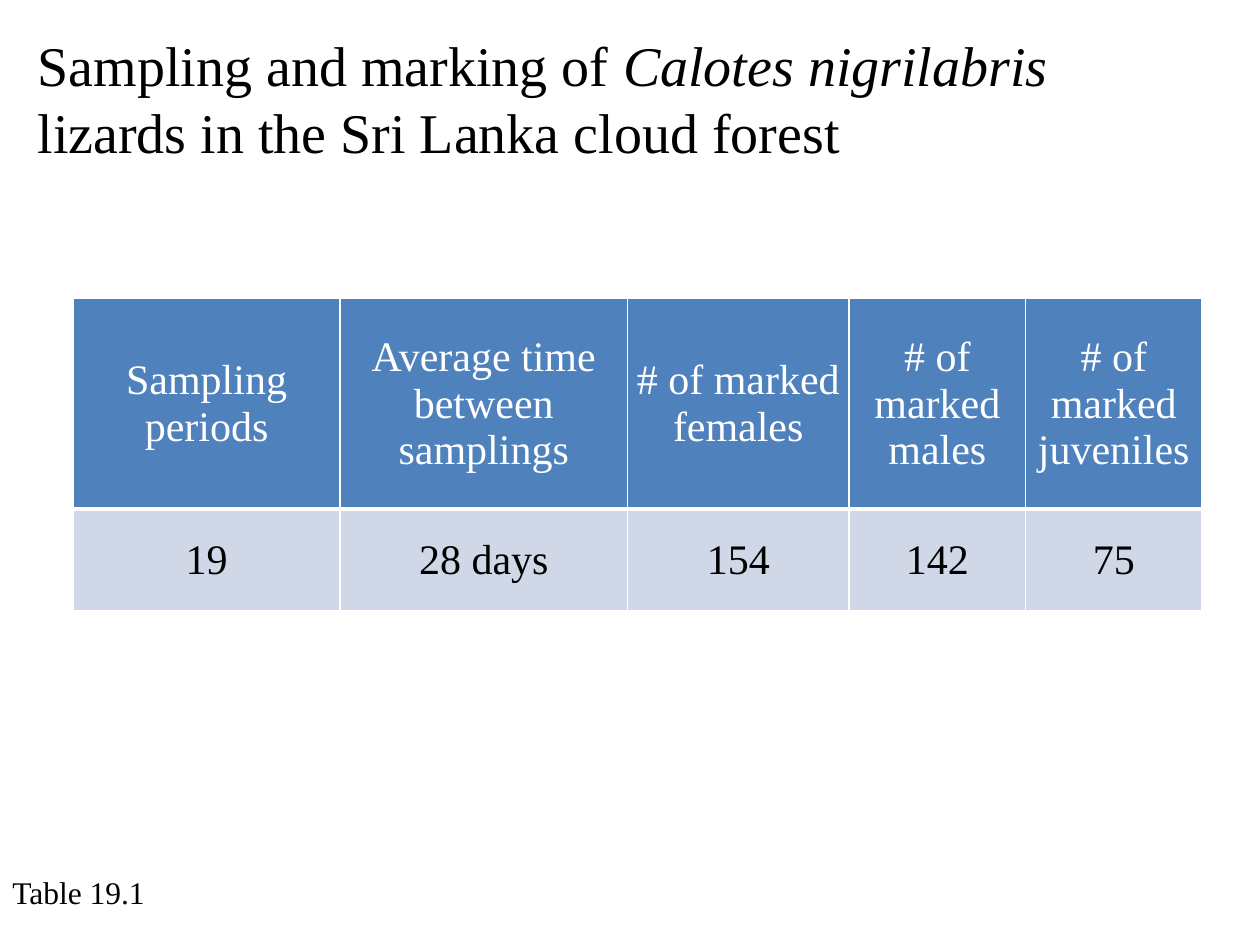
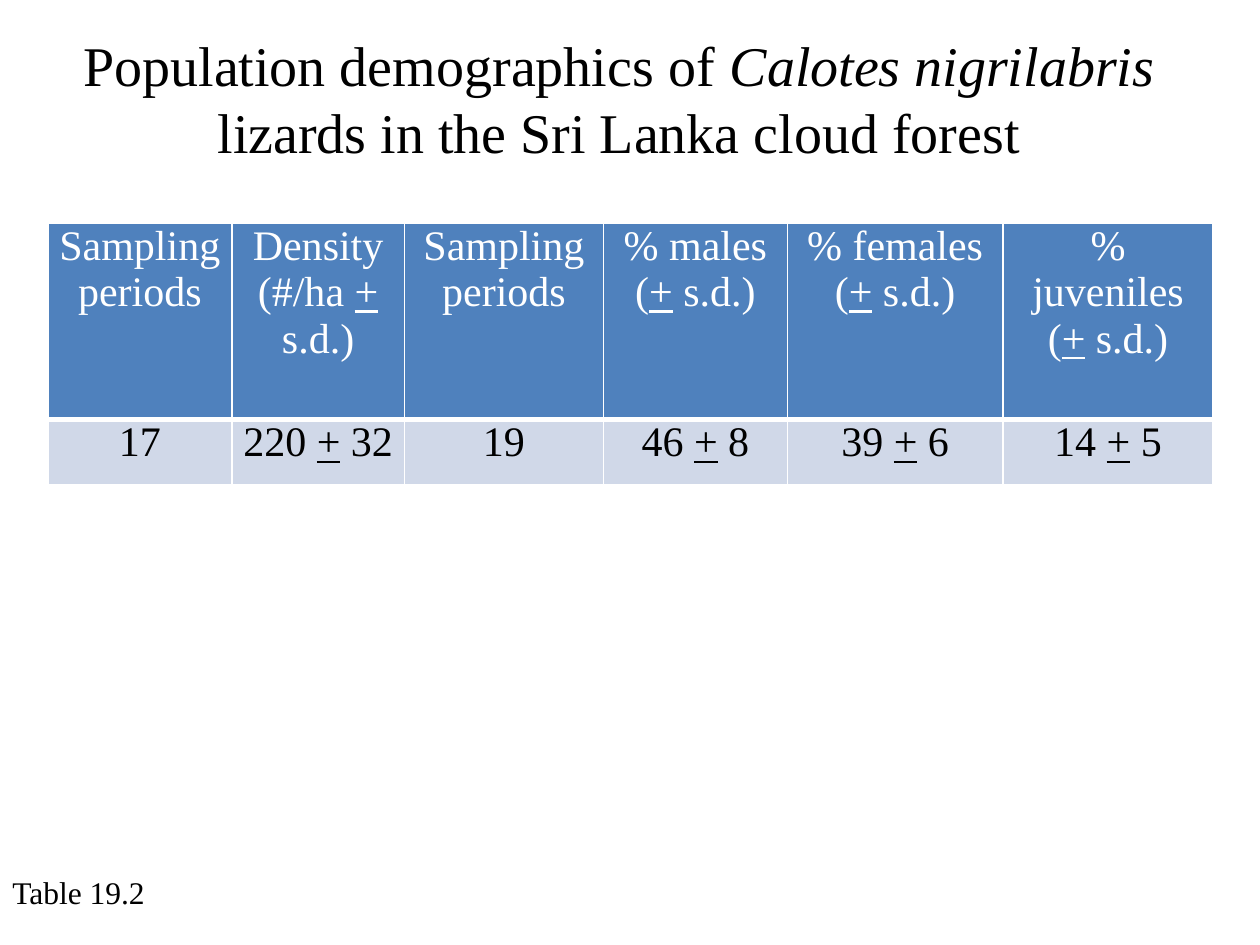
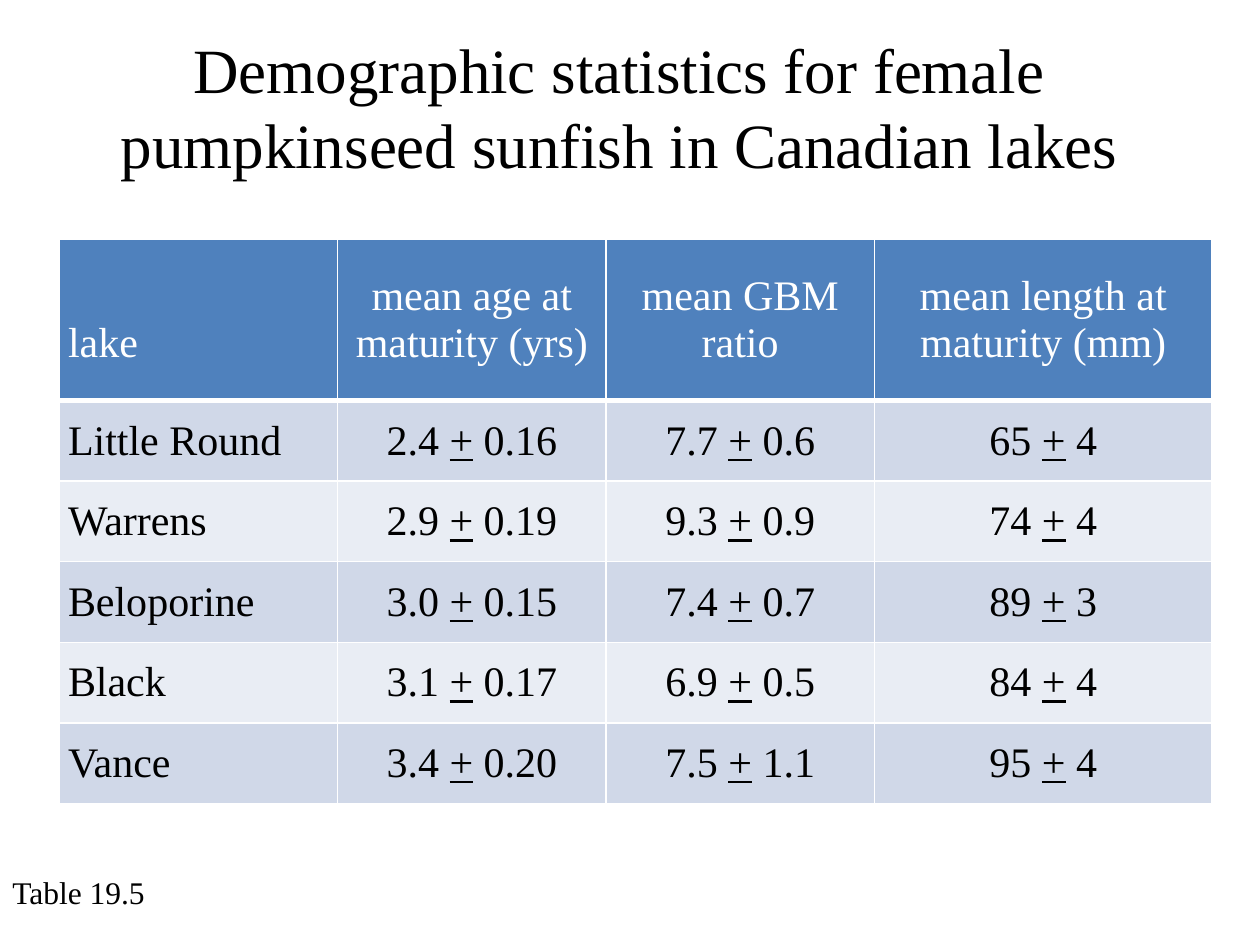
"""Build three slides of lizard and sunfish demographic tables."""
from pptx import Presentation
from pptx.dml.color import RGBColor
from pptx.enum.text import MSO_ANCHOR, MSO_AUTO_SIZE, PP_ALIGN
from pptx.oxml import parse_xml
from pptx.oxml.ns import nsdecls
from pptx.util import Inches, Pt

LEFT, CENTER = PP_ALIGN.LEFT, PP_ALIGN.CENTER
TOP, MIDDLE = MSO_ANCHOR.TOP, MSO_ANCHOR.MIDDLE
FIT = MSO_AUTO_SIZE.SHAPE_TO_FIT_TEXT
BLACK = RGBColor(0x00, 0x00, 0x00)
WHITE = RGBColor(0xFF, 0xFF, 0xFF)
HEADER = RGBColor(0x4F, 0x81, 0xBD)
BANDS = [RGBColor(0xD0, 0xD8, 0xE8), RGBColor(0xE9, 0xED, 0xF4)]
FONT = "Times New Roman"
LINE = Inches(0.37)
MARGINS = {"margin_left": Inches(0.07), "margin_right": Inches(0.07),
           "margin_top": 0, "margin_bottom": 0}

prs = Presentation()
prs.slide_width, prs.slide_height = Inches(10), Inches(7.5)
X, Y = prs.slide_width / 100, prs.slide_height / 100

SLIDES = [
    {"title": "Sampling and marking of |Calotes nigrilabris |lizards in the Sri Lanka cloud forest",
     "size": 32, "height": 15.73, "align": LEFT, "caption": "Table 19.1",
     "left": 5.8, "top": 31.6, "anchor": MIDDLE, "first": CENTER,
     "cols": [21.2, 22.8, 17.6, 14, 14], "rows": [22.27, 10.8],
     "cells": [["Sampling periods", "Average time between samplings", "# of marked females",
                "# of marked males", "# of marked juveniles"],
               ["19", "28 days", "154", "142", "75"]]},
    {"title": "Population demographics of |Calotes nigrilabris |lizards in the Sri Lanka cloud forest",
     "size": 32, "height": 15.73, "align": CENTER, "caption": "Table 19.2",
     "left": 3.8, "top": 23.6, "anchor": TOP, "first": CENTER,
     "cols": [14.6, 13.7, 15.8, 14.6, 17.1, 16.7], "rows": [20.8, 6.93],
     "cells": [["Sampling periods", "Density (#/ha |+| s.d.)", "Sampling periods",
                "% males (|+| s.d.)", "% females (|+| s.d.)", "% juveniles (|+| s.d.)"],
               ["17", "220 |+| 32", "19", "46 |+| 8", "39 |+| 6", "14 |+| 5"]]},
    {"title": "Demographic statistics for female pumpkinseed sunfish in Canadian lakes",
     "size": 36, "height": 17.47, "align": CENTER, "caption": "Table 19.5",
     "left": 4.7, "top": 25.33, "anchor": MIDDLE, "first": LEFT,
     "cols": [22.1, 21.3, 21.3, 26.8], "rows": [17.07] + [8.53] * 5,
     "cells": [["lake", "mean age at maturity (yrs)", "mean GBM ratio",
                "mean length at maturity (mm)"],
               ["Little Round", "2.4 |+| 0.16", "7.7 |+| 0.6", "65 |+| 4"],
               ["Warrens", "2.9 |+| 0.19", "9.3 |+| 0.9", "74 |+| 4"],
               ["Beloporine", "3.0 |+| 0.15", "7.4 |+| 0.7", "89 |+| 3"],
               ["Black", "3.1 |+| 0.17", "6.9 |+| 0.5", "84 |+| 4"],
               ["Vance", "3.4 |+| 0.20", "7.5 |+| 1.1", "95 |+| 4"]]},
]


def write(tf, text, size, align=LEFT, color=BLACK, mark="underline"):
    """Fill a text frame; parts between bars get the marked format."""
    p = tf.paragraphs[0]
    p.alignment = align
    for i, part in enumerate(text.split("|")):
        r = p.add_run()
        r.text = part
        for key, value in {"name": FONT, "size": Pt(size), "bold": False, mark: i % 2 == 1}.items():
            setattr(r.font, key, value)
        r.font.color.rgb = color


def add_box(s, left, top, width, height, wrap):
    """Add a text box placed in percent of the slide and return its frame."""
    tf = s.shapes.add_textbox(int(left * X), int(top * Y), int(width * X), int(height * Y)).text_frame
    tf.word_wrap, tf.auto_size = wrap, FIT
    return tf


for d in SLIDES:
    s = prs.slides.add_slide(prs.slide_layouts[6])
    write(add_box(s, 2, 2.53, 94.3, d["height"], True), d["title"], d["size"], d["align"], mark="italic")
    write(add_box(s, 0, 91.73, 13.3, 5.33, False), d["caption"], 18)

    table = s.shapes.add_table(len(d["rows"]), len(d["cols"]), int(d["left"] * X), int(d["top"] * Y),
                               int(sum(d["cols"]) * X), int(sum(d["rows"]) * Y)).table
    table.first_row = table.horz_banding = False
    for col, width in zip(table.columns, d["cols"]):
        col.width = int(width * X)
    for row, height in zip(table.rows, d["rows"]):
        row.height = int(height * Y)

    for i, texts in enumerate(d["cells"]):
        for j, text in enumerate(texts):
            cell = table.cell(i, j)
            for key, value in {**MARGINS, "vertical_anchor": d["anchor"]}.items():
                setattr(cell, key, value)
            if text == "lake":
                cell.margin_top = LINE
            thick = {0: "B", 1: "T"}.get(i)
            for side in "LRTB":
                cell._tc.get_or_add_tcPr().append(parse_xml(
                    f'<a:ln{side} {nsdecls("a")} w="{Pt(3 if side == thick else 1)}"><a:solidFill>'
                    f'<a:srgbClr val="{WHITE}"/></a:solidFill></a:ln{side}>'))
            cell.fill.solid()
            cell.fill.fore_color.rgb = BANDS[(i - 1) % 2] if i else HEADER
            write(cell.text_frame, text, 24, CENTER if j else d["first"], BLACK if i else WHITE)

prs.save("out.pptx")
